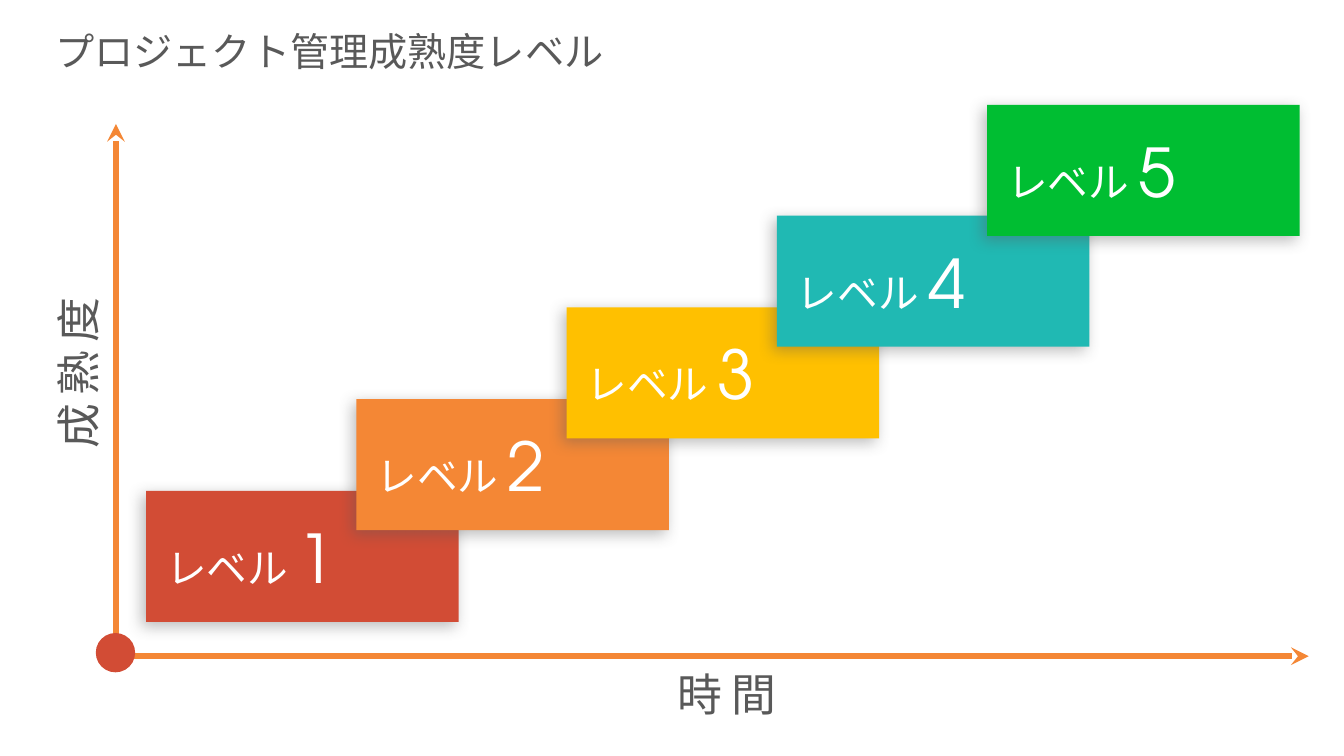
from lxml import etree
from pptx import Presentation
from pptx import util as u
from pptx.dml.color import RGBColor
from pptx.enum import shapes, text
from pptx.oxml import parse_xml
from pptx.oxml.ns import nsdecls, qn

FONT = "TeX Gyre Adventor"
GREY = RGBColor(0x59, 0x59, 0x59)
WHITE = RGBColor(0xFF, 0xFF, 0xFF)
RED = RGBColor(0xD2, 0x4C, 0x35)
ORANGE = RGBColor(0xF4, 0x87, 0x35)
YELLOW = RGBColor(0xFF, 0xC0, 0x00)
TEAL = RGBColor(0x20, 0xB9, 0xB3)
GREEN = RGBColor(0x00, 0xBE, 0x32)
LEVEL_COLORS = [RED, ORANGE, YELLOW, TEAL, GREEN]


def set_font(para, size, color):
    para.font.name = FONT
    para.font.size = u.Pt(size)
    para.font.color.rgb = color


def add_label(page, box, words, size, centred=False, spacing=0, rotation=0):
    label = page.shapes.add_textbox(*map(u.Inches, box))
    label.rotation = rotation
    frame = label.text_frame
    frame.word_wrap = True
    frame.auto_size = text.MSO_AUTO_SIZE.SHAPE_TO_FIT_TEXT
    para = frame.paragraphs[0]
    set_font(para, size, GREY)
    if centred:
        para.alignment = text.PP_ALIGN.CENTER
    span = para.add_run()
    span.text = words
    if spacing:
        span.font._element.set("spc", str(spacing * 100))


def add_solid(page, kind, box, color):
    solid = page.shapes.add_shape(kind, *map(u.Inches, box))
    solid.shadow.inherit = False
    solid.fill.solid()
    solid.fill.fore_color.rgb = color
    solid.line.fill.background()
    return solid


def add_soft_shadow(solid):
    effects = solid._element.spPr.find(qn("a:effectLst"))
    effects.append(parse_xml(
        f'<a:outerShdw {nsdecls("a")} blurRad="{u.Pt(11)}" dist="{u.Pt(4)}" '
        f'dir="{135 * 60000}" algn="tr" rotWithShape="0">'
        f'<a:srgbClr val="{GREY}"><a:alpha val="40000"/></a:srgbClr>'
        '</a:outerShdw>'))


def add_level(page, box, number, color):
    step = add_solid(page, shapes.MSO_SHAPE.RECTANGLE, box, color)
    add_soft_shadow(step)
    frame = step.text_frame
    frame.word_wrap = False
    frame.vertical_anchor = text.MSO_ANCHOR.MIDDLE
    frame.margin_left = u.Inches(0.2)
    frame.margin_top = frame.margin_right = frame.margin_bottom = 0
    para = frame.paragraphs[0]
    para.alignment = text.PP_ALIGN.LEFT
    set_font(para, 29, WHITE)
    for words, size in (("レベル ", 29), (str(number), 48)):
        span = para.add_run()
        span.text = words
        span.font.size = u.Pt(size)


def add_staircase(page, box):
    left, top, width, height = box
    step_width, step_height, rise, last_gap = 3.1, 1.3, 0.91, 0.19
    run = (width - step_width) / (len(LEVEL_COLORS) - 1)
    bottom = top + height
    for index, color in enumerate(LEVEL_COLORS):
        # The final step climbs a little higher than the others
        extra = last_gap if color == GREEN else 0
        step_top = bottom - step_height - index * rise - extra
        add_level(page, (left + index * run, step_top, step_width, step_height),
                  index + 1, color)


def add_arrow(page, start, end):
    arrow = page.shapes.add_connector(
        shapes.MSO_CONNECTOR.STRAIGHT, *map(u.Inches, start + end))
    arrow.line.color.rgb = ORANGE
    arrow.line.width = u.Pt(4.25)
    etree.SubElement(arrow.line._get_or_add_ln(), qn("a:tailEnd"), type="stealth")
    etree.SubElement(arrow._element.spPr, qn("a:effectLst"))


def add_axes(page, box):
    left, top, width, height = box
    origin = (left, top + height)
    add_arrow(page, origin, (left, top))
    add_arrow(page, origin, (left + width, top + height))

    # Dot at the origin
    add_solid(page, shapes.MSO_SHAPE.OVAL,
              (left - 0.2, top + height - 0.23, 0.39, 0.39), RED)

    # Axis names
    label_width, label_height = 3.08, 0.64
    add_label(page, (left - 1.92, top + 2.15, label_width, label_height),
              "成熟度", 32, centred=True, spacing=6, rotation=270)
    add_label(page, (left + 4.52, top + height + 0.06, label_width, label_height),
              "時間", 32, centred=True, spacing=6)


def main():
    deck = Presentation()
    deck.slide_width = u.Inches(13.33)
    deck.slide_height = u.Inches(7.5)
    page = deck.slides.add_slide(deck.slide_layouts[6])

    add_label(page, (0.45, 0.22, 11.15, 0.57), "プロジェクト管理成熟度レベル", 28)
    add_staircase(page, (1.45, 1.04, 11.44, 5.13))
    add_axes(page, (1.15, 1.23, 11.83, 5.28))

    deck.save("out.pptx")


if __name__ == "__main__":
    main()
